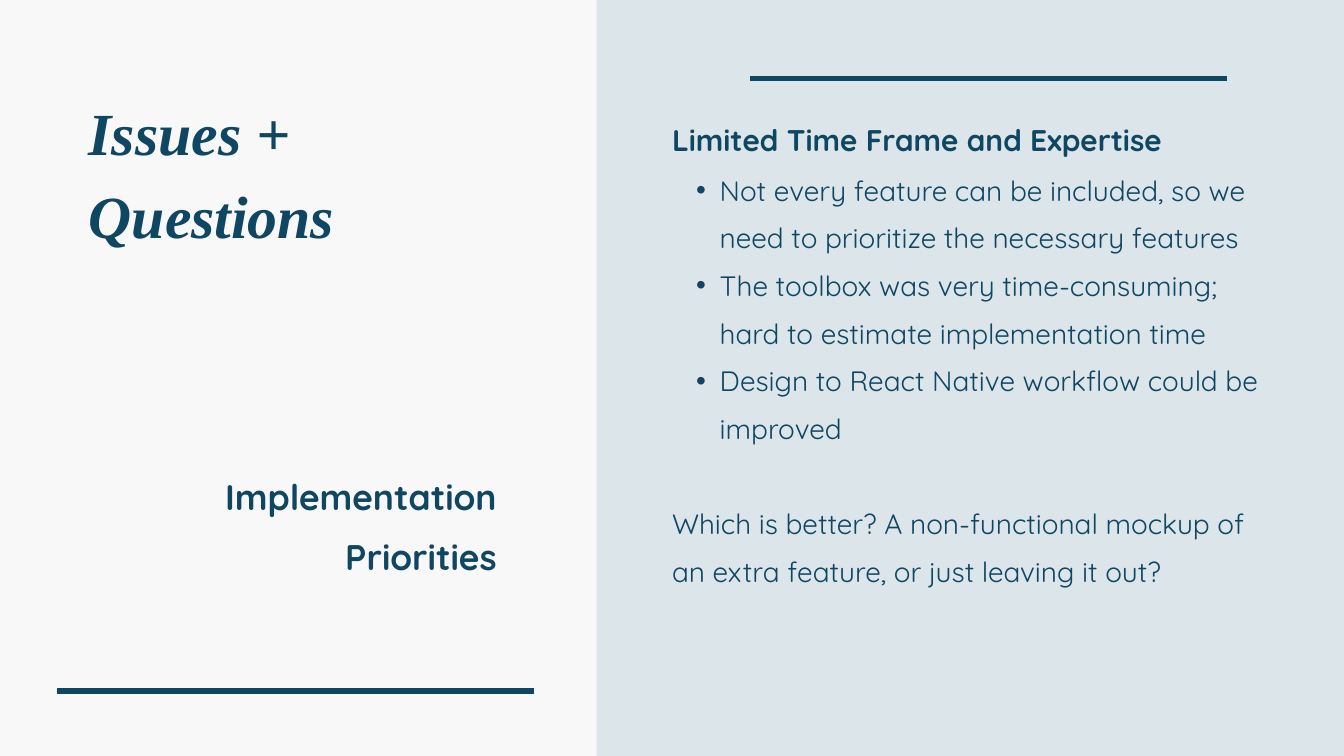
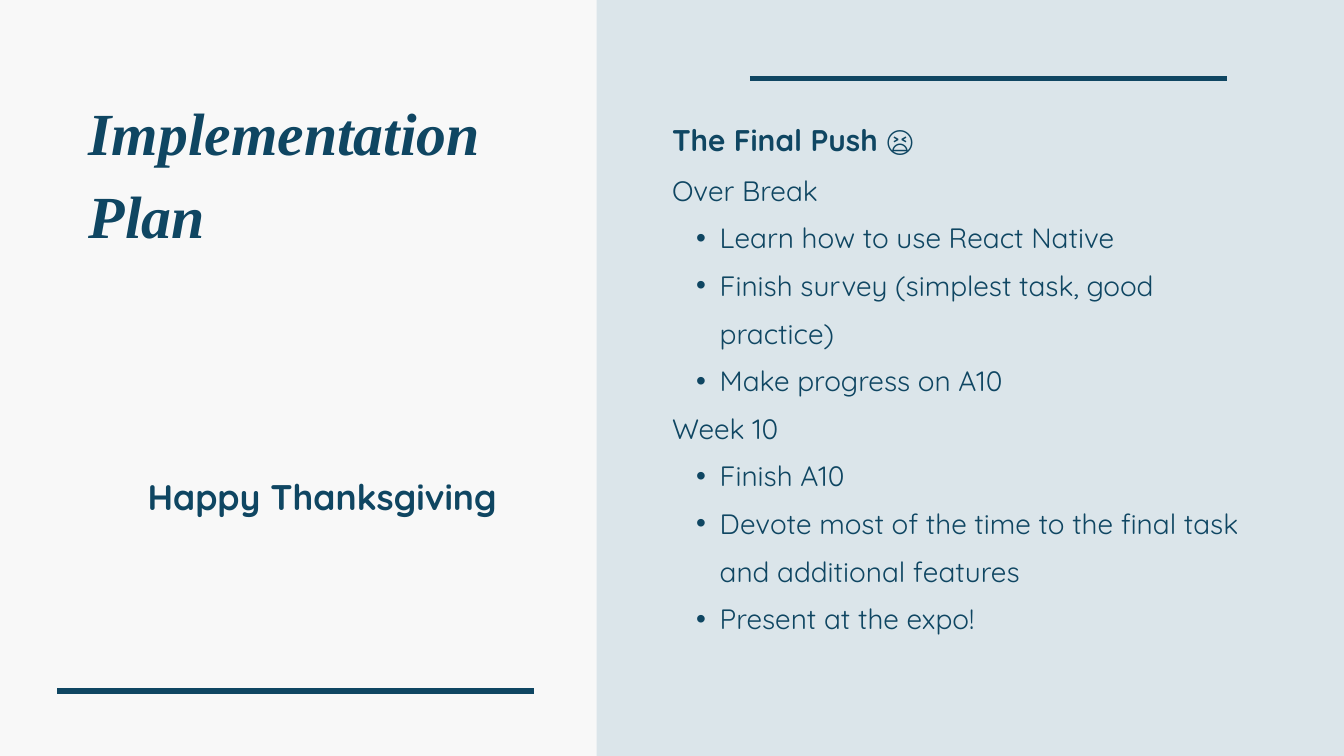
from dataclasses import dataclass

from lxml import etree
from pptx import Presentation
from pptx import util as u
from pptx.dml.color import RGBColor
from pptx.enum import shapes, text
from pptx.oxml.ns import qn

PX = 9144  # 100 px to the inch
WIDTH, HEIGHT = 2000, 1125


@dataclass(frozen=True)
class Style:
    size: float
    leading: float
    font: str = "Quicksand"
    bold: bool = False
    italic: bool = False
    align: text.PP_ALIGN = text.PP_ALIGN.LEFT


@dataclass(frozen=True)
class Theme:
    ink: RGBColor = RGBColor.from_string("0F4662")
    paper: RGBColor = RGBColor.from_string("F8F8F8")
    panel: RGBColor = RGBColor.from_string("DBE5EA")
    rule: float = 6
    title: Style = Style(64, 89.6, "Times New Roman", True, True)
    heading: Style = Style(32, 54.4, bold=True)
    body: Style = Style(30, 51)
    caption: Style = Style(38.1, 64.8, bold=True, align=text.PP_ALIGN.RIGHT)


@dataclass(frozen=True)
class Line:
    words: str
    bullet: bool = False
    gap: float = 0


@dataclass(frozen=True)
class Content:
    title: str
    title_height: int
    caption: list
    caption_height: int
    heading: str
    body: list
    body_height: int


THEME = Theme()
LEFT_BOX = (0, 0, 888, HEIGHT)
RIGHT_BOX = (888, 0, WIDTH - 888, HEIGHT)


def bullet(item):
    return Line(item, bullet=True)


SLIDES = [
    Content(
        "Issues + Questions", 119,
        [Line("Implementation"), Line("Priorities")], 171,
        "Limited Time Frame and Expertise",
        [
            bullet("Not every feature can be included, so we need to prioritize the necessary features"),
            bullet("The toolbox was very time-consuming; hard to estimate implementation time"),
            bullet("Design to React Native workflow could be improved"),
            Line("Which is better? A non-functional mockup of an extra feature, "
                 "or just leaving it out?", gap=THEME.body.leading),
        ], 633),
    Content(
        "Implementation Plan", 243,
        [Line("Happy Thanksgiving")], 82,
        "The Final Push 😫",
        [
            Line("Over Break"),
            bullet("Learn how to use React Native"),
            bullet("Finish survey (simplest task, good practice)"),
            bullet("Make progress on A10"),
            Line("Week 10"),
            bullet("Finish A10"),
            bullet("Devote most of the time to the final task and additional features"),
            bullet("Present at the expo!"),
        ], 704),
]


def emu(*lengths):
    return [u.Emu(n * PX) for n in lengths]


def set_bullet(p, shown):
    pPr = p._p.get_or_add_pPr()
    pPr.set("marL", str(71 * PX if shown else 0))
    pPr.set("indent", str(-35 * PX if shown else 0))
    if shown:
        p.level = 1
        etree.SubElement(pPr, qn("a:buFont")).set("typeface", "Arial")
        etree.SubElement(pPr, qn("a:buChar")).set("char", "•")
    else:
        etree.SubElement(pPr, qn("a:buNone"))


def write(sp, box, lines, style):
    """Place a text shape and fill it with lines in one style."""
    sp.left, sp.top, sp.width, sp.height = emu(*box)
    tf = sp.text_frame
    tf.word_wrap = True
    tf.auto_size = text.MSO_AUTO_SIZE.SHAPE_TO_FIT_TEXT
    tf.vertical_anchor = text.MSO_ANCHOR.TOP
    tf.margin_left = tf.margin_top = tf.margin_right = tf.margin_bottom = 0
    for i, line in enumerate(lines):
        p = tf.add_paragraph() if i else tf.paragraphs[0]
        p.alignment = style.align
        p.line_spacing = u.Pt(style.leading)
        p.space_before = u.Pt(line.gap)
        p.space_after = u.Pt(0)
        set_bullet(p, line.bullet)
        r = p.add_run()
        r.text = line.words
        r.font.name, r.font.size = style.font, u.Pt(style.size)
        r.font.bold, r.font.italic = style.bold, style.italic
        r.font.color.rgb = THEME.ink


def add_rule(s, x, y, width):
    line = s.shapes.add_connector(
        shapes.MSO_CONNECTOR.STRAIGHT, *emu(x, y, x + width, y))
    line.line.color.rgb = THEME.ink
    line.line.width = u.Pt(THEME.rule)
    etree.SubElement(line.element.spPr, qn("a:effectLst"))


def add_backdrop(s):
    s.background.fill.solid()
    s.background.fill.fore_color.rgb = THEME.paper
    panel = s.shapes.add_shape(shapes.MSO_SHAPE.RECTANGLE, *emu(*RIGHT_BOX))
    panel.shadow.inherit = False
    panel.fill.solid()
    panel.fill.fore_color.rgb = THEME.panel
    panel.line.fill.background()


def add_left(s, box, content):
    x, y, w, h = box
    add_rule(s, x + 85, y + 1028, 710)
    write(s.shapes.title, (x + 132, y + 124, 663, content.title_height),
          [Line(content.title)], THEME.title)
    caption = s.shapes.add_textbox(0, 0, 0, 0)
    write(caption, (x + 141, y + 680, 598, content.caption_height),
          content.caption, THEME.caption)


def add_right(s, box, content):
    x, y, w, h = box
    add_rule(s, x + 228, y + 117, 710)
    write(s.placeholders[1], (x + 112, y + 237, 881, content.body_height),
          content.body, THEME.body)
    heading = s.shapes.add_textbox(0, 0, 0, 0)
    write(heading, (x + 112, y + 159, 941, 68),
          [Line(content.heading)], THEME.heading)


def add_slide(prs, content):
    s = prs.slides.add_slide(prs.slide_layouts[1])
    add_backdrop(s)
    for placeholder in list(s.placeholders):  # bring text in front of the panel
        s.shapes.element.append(placeholder.element)
    add_left(s, LEFT_BOX, content)
    add_right(s, RIGHT_BOX, content)


def main():
    prs = Presentation()
    prs.slide_width, prs.slide_height = emu(WIDTH, HEIGHT)
    for content in SLIDES:
        add_slide(prs, content)
    prs.save("out.pptx")


if __name__ == "__main__":
    main()
